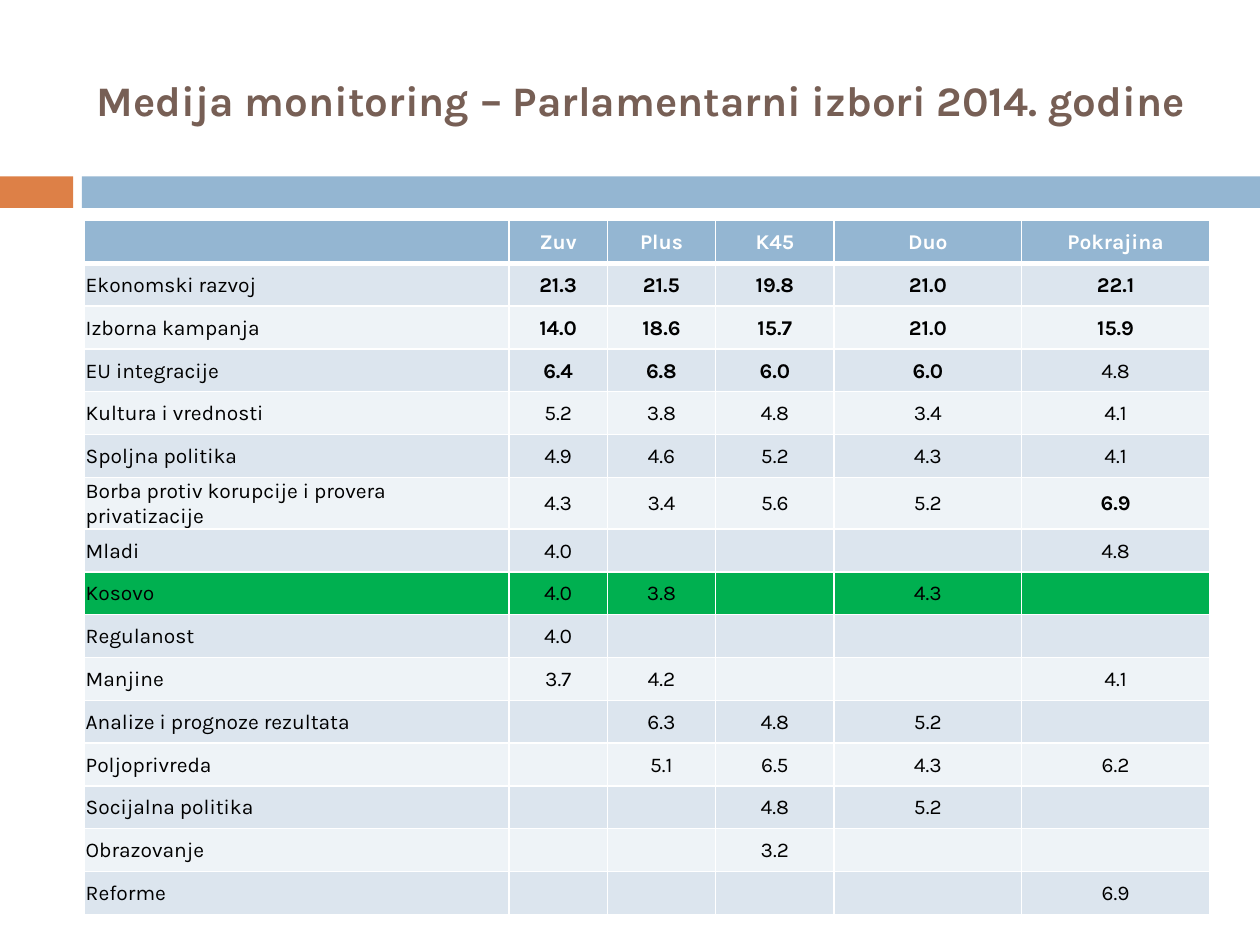
from dataclasses import dataclass

from lxml.etree import SubElement
from pptx import Presentation
from pptx.dml.color import RGBColor
from pptx.enum.shapes import MSO_SHAPE
from pptx.enum.text import MSO_ANCHOR, PP_ALIGN
from pptx.oxml.ns import qn
from pptx.slide import Slide
from pptx.table import _Cell
from pptx.text.text import _Paragraph
from pptx.util import Inches, Pt


@dataclass(frozen=True)
class Theme:
    font: str = "Karla"
    title: str = "775F55"
    accent: str = "DD8047"
    header: str = "94B6D2"
    odd_row: str = "DCE5EE"
    even_row: str = "EEF3F7"
    highlight: str = "00B050"
    white: str = "FFFFFF"
    text: str = "000000"
    title_size: int = 24
    table_size: int = 12
    border: int = 1
    header_border: int = 3


@dataclass(frozen=True)
class Band:
    left: float
    width: float
    color: str


@dataclass(frozen=True)
class Topic:
    name: str
    shares: tuple[str, ...]
    bold_columns: tuple[int, ...] = ()
    highlighted: bool = False


THEME = Theme()
BANDS = (Band(0, 0.58, THEME.accent), Band(0.65, 9.35, THEME.header))
STATIONS = ("Zuv", "Plus", "K45", "Duo", "Pokrajina")
COLUMN_WIDTHS = (3.37, 0.78, 0.86, 0.94, 1.49, 1.49)
ROW_HEIGHT = 0.34
TOPICS = (
    Topic("Ekonomski razvoj", ("21.3", "21.5", "19.8", "21.0", "22.1"), (1, 2, 3, 4, 5)),
    Topic("Izborna kampanja", ("14.0", "18.6", "15.7", "21.0", "15.9"), (1, 2, 3, 4, 5)),
    Topic("EU integracije", ("6.4", "6.8", "6.0", "6.0", "4.8"), (1, 2, 3, 4)),
    Topic("Kultura i vrednosti", ("5.2", "3.8", "4.8", "3.4", "4.1")),
    Topic("Spoljna politika", ("4.9", "4.6", "5.2", "4.3", "4.1")),
    Topic("Borba protiv korupcije i provera privatizacije", ("4.3", "3.4", "5.6", "5.2", "6.9"), (5,)),
    Topic("Mladi", ("4.0", "", "", "", "4.8")),
    Topic("Kosovo", ("4.0", "3.8", "", "4.3", ""), highlighted=True),
    Topic("Regulanost", ("4.0", "", "", "", "")),
    Topic("Manjine", ("3.7", "4.2", "", "", "4.1")),
    Topic("Analize i prognoze rezultata", ("", "6.3", "4.8", "5.2", "")),
    Topic("Poljoprivreda", ("", "5.1", "6.5", "4.3", "6.2")),
    Topic("Socijalna politika", ("", "", "4.8", "5.2", "")),
    Topic("Obrazovanje", ("", "", "3.2", "", "")),
    Topic("Reforme", ("", "", "", "", "6.9")),
)


def format_runs(paragraph: _Paragraph, size: int, color: str, bold: bool) -> None:
    for run in paragraph.runs:
        run.font.name = THEME.font
        run.font.size = Pt(size)
        run.font.bold = bold
        run.font.color.rgb = RGBColor.from_string(color)


def draw_band(slide: Slide, band: Band) -> None:
    bar = slide.shapes.add_shape(
        MSO_SHAPE.RECTANGLE, Inches(band.left), Inches(1.4), Inches(band.width), Inches(0.25)
    )
    bar.shadow.inherit = False
    bar.fill.solid()
    bar.fill.fore_color.rgb = RGBColor.from_string(band.color)
    bar.line.fill.background()


def draw_title(slide: Slide, wording: str) -> None:
    title = slide.shapes.add_textbox(Inches(0.67), Inches(0.25), Inches(8.92), Inches(1.08))
    frame = title.text_frame
    frame.word_wrap = True
    frame.vertical_anchor = MSO_ANCHOR.MIDDLE
    frame.text = wording
    format_runs(frame.paragraphs[0], THEME.title_size, THEME.title, True)


def set_borders(cell: _Cell, row: int) -> None:
    properties = cell._tc.get_or_add_tcPr()
    top = THEME.header_border if row == 1 else THEME.border
    bottom = THEME.header_border if row == 0 else THEME.border
    widths = {"a:lnL": THEME.border, "a:lnR": THEME.border, "a:lnT": top, "a:lnB": bottom}
    for side, width in widths.items():
        line = SubElement(properties, qn(side), w=str(Pt(width)))
        SubElement(SubElement(line, qn("a:solidFill")), qn("a:srgbClr"), val=THEME.white)


def fill_cell(cell: _Cell, row: int, column: int, wording: str, fill: str, bold: bool) -> None:
    set_borders(cell, row)
    cell.fill.solid()
    cell.fill.fore_color.rgb = RGBColor.from_string(fill)
    cell.margin_left = cell.margin_right = cell.margin_top = Inches(0.01)
    cell.margin_bottom = 0
    cell.vertical_anchor = MSO_ANCHOR.MIDDLE
    if wording:
        cell.text_frame.text = wording
        paragraph = cell.text_frame.paragraphs[0]
        paragraph.alignment = PP_ALIGN.CENTER if column else PP_ALIGN.LEFT
        format_runs(paragraph, THEME.table_size, THEME.text if row else THEME.white, bold)


def draw_table(slide: Slide) -> None:
    row_count = len(TOPICS) + 1
    table = slide.shapes.add_table(
        row_count, len(COLUMN_WIDTHS), Inches(0.67), Inches(1.75),
        Inches(sum(COLUMN_WIDTHS)), Inches(ROW_HEIGHT * row_count),
    ).table
    for column, width in zip(table.columns, COLUMN_WIDTHS):
        column.width = Inches(width)
    for table_row in table.rows:
        table_row.height = Inches(ROW_HEIGHT)

    for column, station in enumerate(("", *STATIONS)):
        fill_cell(table.cell(0, column), 0, column, station, THEME.header, True)
    for row, topic in enumerate(TOPICS, start=1):
        stripe = THEME.odd_row if row % 2 else THEME.even_row
        fill = THEME.highlight if topic.highlighted else stripe
        for column, wording in enumerate((topic.name, *topic.shares)):
            bold = column in topic.bold_columns
            fill_cell(table.cell(row, column), row, column, wording, fill, bold)


def main() -> None:
    """Build the media monitoring slide and save it."""
    presentation = Presentation()
    presentation.slide_width = Inches(10)
    presentation.slide_height = Inches(7.5)
    slide = presentation.slides.add_slide(presentation.slide_layouts[6])
    for band in BANDS:
        draw_band(slide, band)
    draw_title(slide, "Medija monitoring – Parlamentarni izbori 2014. godine")
    draw_table(slide)
    presentation.save("out.pptx")


if __name__ == "__main__":
    main()
